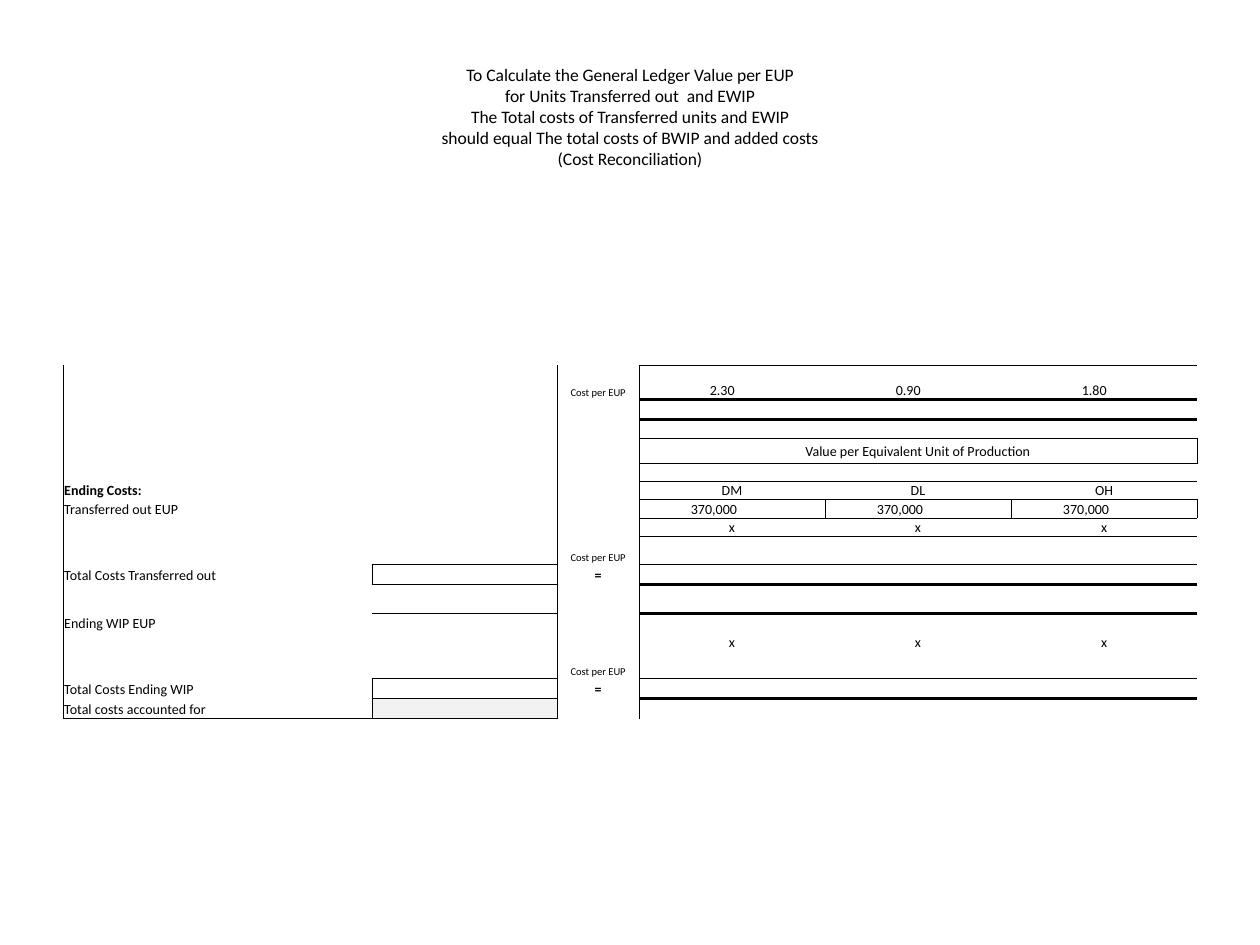
import collections
import pptx
import pptx.util
import pptx.dml.color
import pptx.enum.text
import pptx.oxml.ns
import lxml.etree

Pt = pptx.util.Pt
ALIGN = pptx.enum.text.PP_ALIGN
ANCHOR = pptx.enum.text.MSO_ANCHOR
qn = pptx.oxml.ns.qn

TITLE_LINES = [
    "To Calculate the General Ledger Value per EUP",
    "for Units Transferred out  and EWIP",
    "The Total costs of Transferred units and EWIP",
    "should equal The total costs of BWIP and added costs",
    "(Cost Reconciliation)",
]
COST_LABELS = {
    5: "Ending Costs:",
    6: "Transferred out EUP",
    9: "Total Costs Transferred out",
    11: "Ending WIP EUP",
    14: "Total Costs Ending WIP",
    15: "Total costs accounted for",
}
OPERATORS = {0: "Cost per EUP", 8: "Cost per EUP", 9: "=", 13: "Cost per EUP", 14: "="}
INPUT_VALUES = {
    0: ["2.30", "0.90", "1.80"],
    3: ["Value per Equivalent Unit of Production"],
    5: ["DM", "DL", "OH"],
    6: ["370,000"] * 3,
    7: ["x"] * 3,
    12: ["x"] * 3,
}
VALUE_INDENTS = {0: 40.5, 6: 29.7}

THEME = {
    "font": "Calibri", "ink": "000000", "shade": "F2F2F2",
    "title": 10, "body": 8, "small": 6, "thin": 0.5, "thick": 2,
    "table_style": "{2D5ABB26-0587-4C30-8999-92F81FD0307C}",
}
COLUMN_WIDTHS = [112.6, 64, 105.9, 46.7] + [106.3] * 3
ROW_HEIGHTS = [19.5, 11.5, 10.6, 14.4, 10.1, 10.6, 10.6, 10.6,
               15.8, 11.5, 17, 10.6, 10.6, 15.8, 11.5, 11.5]
LABEL, TOTAL, OPERATOR, INPUTS = 0, 2, 3, [4, 5, 6]
SPANS = [(3, 4, 6), (9, 0, 1), (14, 0, 1), (15, 0, 1)]
TOTAL_ROWS = [9, 14, 15]
THIN, THICK = THEME["thin"], THEME["thick"]
ALL_ROWS = range(len(ROW_HEIGHTS))

ROW_EDGES = (
    [(edge, INPUTS, THIN) for edge in (0, 3, 4, 6, 7, 9, 14)]
    + [(edge, INPUTS, THICK) for edge in (1, 10, 15)]
    + [(edge, [TOTAL], THIN) for edge in (9, 10, 14, 15)]
    + [(16, [0, 1, 2], THIN)]
)
COLUMN_EDGES = [(0, ALL_ROWS), (3, ALL_ROWS), (2, TOTAL_ROWS),
                (4, [3, 6]), (7, [3, 6]), (5, [6]), (6, [6])]


def style_font(font, size, bold=False):
    font.name = THEME["font"]
    font.size = Pt(size)
    font.bold = bold
    font.color.rgb = pptx.dml.color.RGBColor.from_string(THEME["ink"])


def write_cell(cell, words, size=THEME["body"], align=ALIGN.LEFT, bold=False, indent=0.72):
    cell.text_frame.text = words
    cell.margin_left = Pt(indent)
    paragraph = cell.text_frame.paragraphs[0]
    paragraph.alignment = align
    style_font(paragraph.runs[0].font, size, bold)


def plan_borders():
    origins = {(row, column): (row, first)
               for row, first, last in SPANS for column in range(first, last + 1)}
    borders = collections.defaultdict(dict)

    def mark(row, column, side, width):
        if 0 <= row < len(ROW_HEIGHTS) and 0 <= column < len(COLUMN_WIDTHS):
            for place in {(row, column), origins.get((row, column), (row, column))}:
                borders[place][side] = width

    for edge, columns, width in ROW_EDGES:
        for column in columns:
            mark(edge - 1, column, "B", width)
            mark(edge, column, "T", width)
    for edge, rows in COLUMN_EDGES:
        for row in rows:
            mark(row, edge - 1, "R", THIN)
            mark(row, edge, "L", THIN)
    return borders


def draw_borders(cell, sides):
    properties = cell._tc.get_or_add_tcPr()
    for side in "LRTB":
        if side in sides:
            line = lxml.etree.SubElement(properties, qn("a:ln" + side), w=str(Pt(sides[side])))
            fill = lxml.etree.SubElement(line, qn("a:solidFill"))
            lxml.etree.SubElement(fill, qn("a:srgbClr"), val=THEME["ink"])


def add_title(slide):
    frame = slide.shapes.add_textbox(Pt(36), Pt(21.6), Pt(648), Pt(90)).text_frame
    frame.word_wrap = True
    frame.vertical_anchor = ANCHOR.MIDDLE
    frame.text = "\v".join(TITLE_LINES)
    paragraph = frame.paragraphs[0]
    paragraph.alignment = ALIGN.CENTER
    for run in paragraph.runs:
        style_font(run.font, THEME["title"])


def add_costs(slide):
    table = slide.shapes.add_table(
        len(ROW_HEIGHTS), len(COLUMN_WIDTHS), Pt(36), Pt(208.8),
        Pt(sum(COLUMN_WIDTHS)), Pt(sum(ROW_HEIGHTS))).table
    table.first_row = table.horz_banding = False
    table._tbl.tblPr[0].text = THEME["table_style"]
    for column, width in zip(table.columns, COLUMN_WIDTHS):
        column.width = Pt(width)
    for row, height in zip(table.rows, ROW_HEIGHTS):
        row.height = Pt(height)
    for row, first, last in SPANS:
        table.cell(row, first).merge(table.cell(row, last))

    borders = plan_borders()
    for row in ALL_ROWS:
        for column in range(len(COLUMN_WIDTHS)):
            cell = table.cell(row, column)
            cell.margin_left = cell.margin_right = cell.margin_top = Pt(0.72)
            cell.margin_bottom = 0
            cell.vertical_anchor = ANCHOR.BOTTOM
            draw_borders(cell, borders[row, column])
            cell.fill.background()
            lxml.etree.SubElement(cell.text_frame.paragraphs[0]._p, qn("a:endParaRPr"),
                                  sz=str(THEME["small"] * 100))

    for row, words in COST_LABELS.items():
        write_cell(table.cell(row, LABEL), words, bold=words.endswith(":"))
    for row, words in OPERATORS.items():
        equals = words == "="
        write_cell(table.cell(row, OPERATOR), words, THEME["body" if equals else "small"],
                   ALIGN.CENTER, equals)
    for row, values in INPUT_VALUES.items():
        align = ALIGN.LEFT if row in VALUE_INDENTS else ALIGN.CENTER
        for column, words in zip(INPUTS, values):
            write_cell(table.cell(row, column), words, align=align,
                       indent=VALUE_INDENTS.get(row, 0.72))

    table.cell(3, INPUTS[0]).vertical_anchor = ANCHOR.MIDDLE
    grand_total = table.cell(15, TOTAL)
    grand_total.fill.solid()
    grand_total.fill.fore_color.rgb = pptx.dml.color.RGBColor.from_string(THEME["shade"])


def main():
    deck = pptx.Presentation()
    deck.slide_width, deck.slide_height = Pt(720), Pt(540)
    slide = deck.slides.add_slide(deck.slide_layouts[6])
    add_title(slide)
    add_costs(slide)
    deck.save("out.pptx")


if __name__ == "__main__":
    main()
